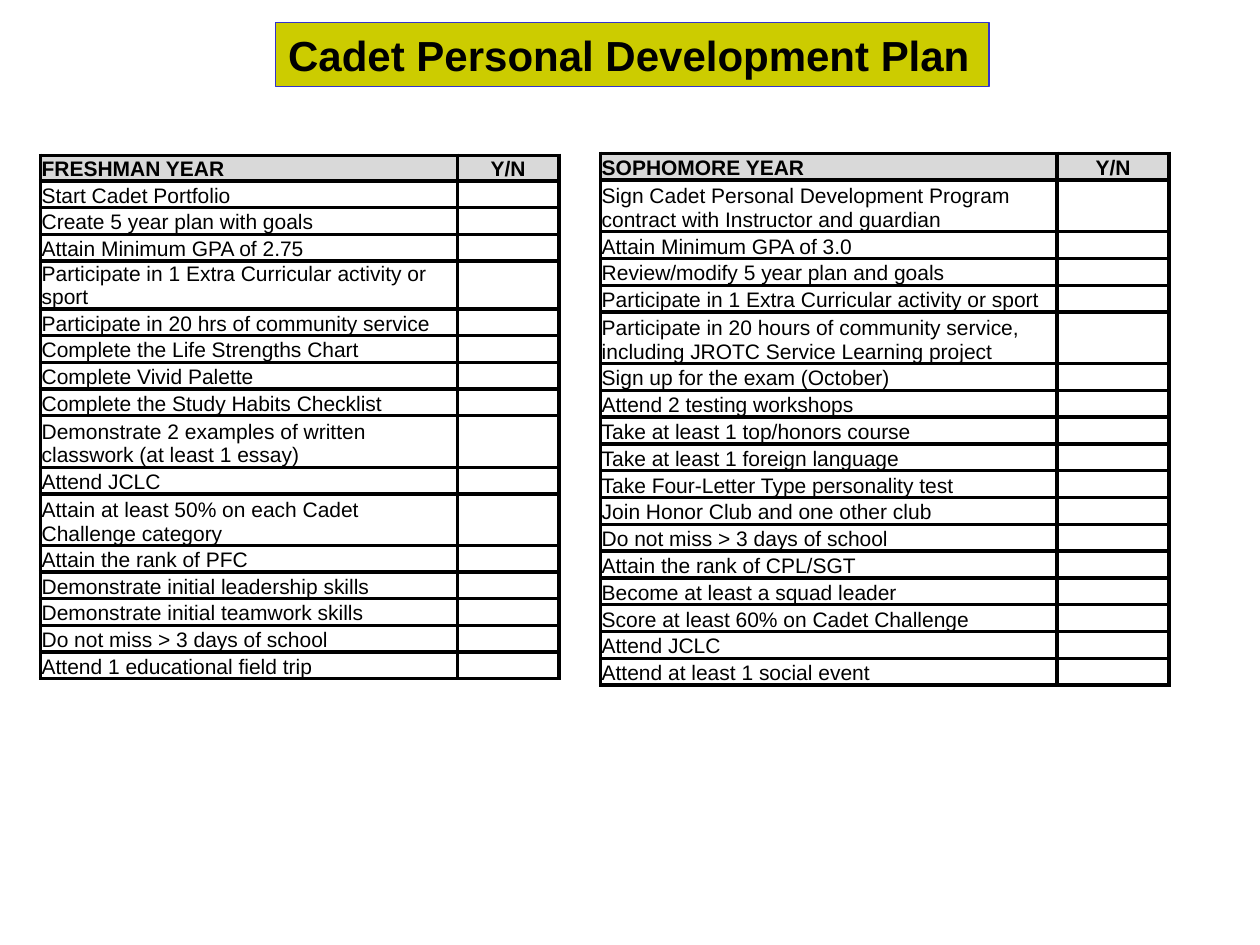
from lxml import etree
from pptx import Presentation
from pptx.dml.color import RGBColor
from pptx.enum.shapes import MSO_SHAPE
from pptx.enum.text import MSO_ANCHOR, MSO_AUTO_SIZE, PP_ALIGN
from pptx.oxml.ns import qn
from pptx.util import Cm, Pt

RECTANGLE = MSO_SHAPE.RECTANGLE
BOTTOM, MIDDLE = MSO_ANCHOR.BOTTOM, MSO_ANCHOR.MIDDLE
LEFT, CENTER = PP_ALIGN.LEFT, PP_ALIGN.CENTER
FIT_SHAPE = MSO_AUTO_SIZE.SHAPE_TO_FIT_TEXT

# Content: rows listed in "tall" hold two lines, given as {row: height in cm}
TITLE = "Cadet Personal Development Plan"
ANSWER = "Y/N"
YEARS = [
    {
        "heading": "FRESHMAN YEAR",
        "left": 0.82, "top": 3.13, "columns": (8.4, 2.05),
        "row": 0.52, "tall": {4: 0.97, 9: 1.04, 11: 1.04},
        "goals": [
            "Start Cadet Portfolio",
            "Create 5 year plan with goals",
            "Attain Minimum GPA of 2.75",
            "Participate in 1 Extra Curricular activity or sport",
            "Participate in 20 hrs of community service",
            "Complete the Life Strengths Chart",
            "Complete Vivid Palette",
            "Complete the Study Habits Checklist",
            "Demonstrate 2 examples of written classwork (at least 1 essay)",
            "Attend JCLC",
            "Attain at least 50% on each Cadet Challenge category",
            "Attain the rank of PFC",
            "Demonstrate initial leadership skills",
            "Demonstrate initial teamwork skills",
            "Do not miss > 3 days of school",
            "Attend 1 educational field trip",
        ],
    },
    {
        "heading": "SOPHOMORE YEAR",
        "left": 12.11, "top": 3.09, "columns": (9.2, 2.26),
        "row": 0.54, "tall": {1: 1.04, 5: 1.04},
        "goals": [
            "Sign Cadet Personal Development Program contract with Instructor and guardian",
            "Attain Minimum GPA of 3.0",
            "Review/modify 5 year plan and goals",
            "Participate in 1 Extra Curricular activity or sport",
            "Participate in 20 hours of community service, including JROTC Service Learning project",
            "Sign up for the exam (October)",
            "Attend 2 testing workshops",
            "Take at least 1 top/honors course",
            "Take at least 1 foreign language",
            "Take Four-Letter Type personality test",
            "Join Honor Club and one other club",
            "Do not miss > 3 days of school",
            "Attain the rank of CPL/SGT",
            "Become at least a squad leader",
            "Score at least 60% on Cadet Challenge",
            "Attend JCLC",
            "Attend at least 1 social event",
        ],
    },
]

THEME = {
    "font": "Arial", "title_size": 24, "table_size": 12,
    "text": "000000", "border": "000000", "border_width": 2.25,
    "header": "D9D9D9", "body": "FFFFFF",
    "title_fill": "CCCC00", "title_line": "3333CC",
}


def color(key):
    return RGBColor.from_string(THEME[key])


def write(frame, text, size, bold=False, align=LEFT):
    paragraph = frame.paragraphs[0]
    paragraph.alignment = align
    if not text:  # an empty cell still needs its type size to keep the row low
        etree.SubElement(paragraph._p, qn("a:endParaRPr"), sz=str(size * 100))
        return
    run = paragraph.add_run()
    run.text = text
    run.font.name = THEME["font"]
    run.font.size = Pt(size)
    run.font.bold = bold
    run.font.color.rgb = color("text")


def add_borders(cell):
    properties = cell._tc.get_or_add_tcPr()
    for side in ("a:lnL", "a:lnR", "a:lnT", "a:lnB"):
        line = etree.SubElement(properties, qn(side), w=str(Pt(THEME["border_width"])))
        fill = etree.SubElement(line, qn("a:solidFill"))
        etree.SubElement(fill, qn("a:srgbClr"), val=THEME["border"])


def style_cell(cell, text, header, align):
    add_borders(cell)
    cell.fill.solid()
    cell.fill.fore_color.rgb = color("header" if header else "body")
    cell.margin_left = cell.margin_right = cell.margin_top = Cm(0.02)
    cell.margin_bottom = 0
    cell.vertical_anchor = BOTTOM
    write(cell.text_frame, text, THEME["table_size"], bold=header, align=align)


def add_checklist(slide, year):
    rows = [(year["heading"], ANSWER)] + [(goal, "") for goal in year["goals"]]
    heights = [year["tall"].get(i, year["row"]) for i in range(len(rows))]
    table = slide.shapes.add_table(
        len(rows), len(year["columns"]), Cm(year["left"]), Cm(year["top"]),
        Cm(sum(year["columns"])), Cm(sum(heights))).table
    for column, width in zip(table.columns, year["columns"]):
        column.width = Cm(width)
    for i, (texts, height) in enumerate(zip(rows, heights)):
        table.rows[i].height = Cm(height)
        for j, (text, align) in enumerate(zip(texts, (LEFT, CENTER))):
            style_cell(table.cell(i, j), text, i == 0, align)


def add_title(slide):
    banner = slide.shapes.add_shape(RECTANGLE, Cm(5.56), Cm(0.46), Cm(14.38), Cm(1.28))
    banner.shadow.inherit = False
    banner.fill.solid()
    banner.fill.fore_color.rgb = color("title_fill")
    banner.line.color.rgb = color("title_line")
    banner.line.width = Pt(0.75)
    frame = banner.text_frame
    frame.word_wrap = False
    frame.auto_size = FIT_SHAPE
    frame.vertical_anchor = MIDDLE
    write(frame, TITLE, THEME["title_size"], bold=True)


def main():
    deck = Presentation()
    deck.slide_width, deck.slide_height = Cm(25.4), Cm(19.05)
    slide = deck.slides.add_slide(deck.slide_layouts[6])
    # Checklists, then the title banner
    for year in YEARS:
        add_checklist(slide, year)
    add_title(slide)
    deck.save("out.pptx")


if __name__ == "__main__":
    main()
